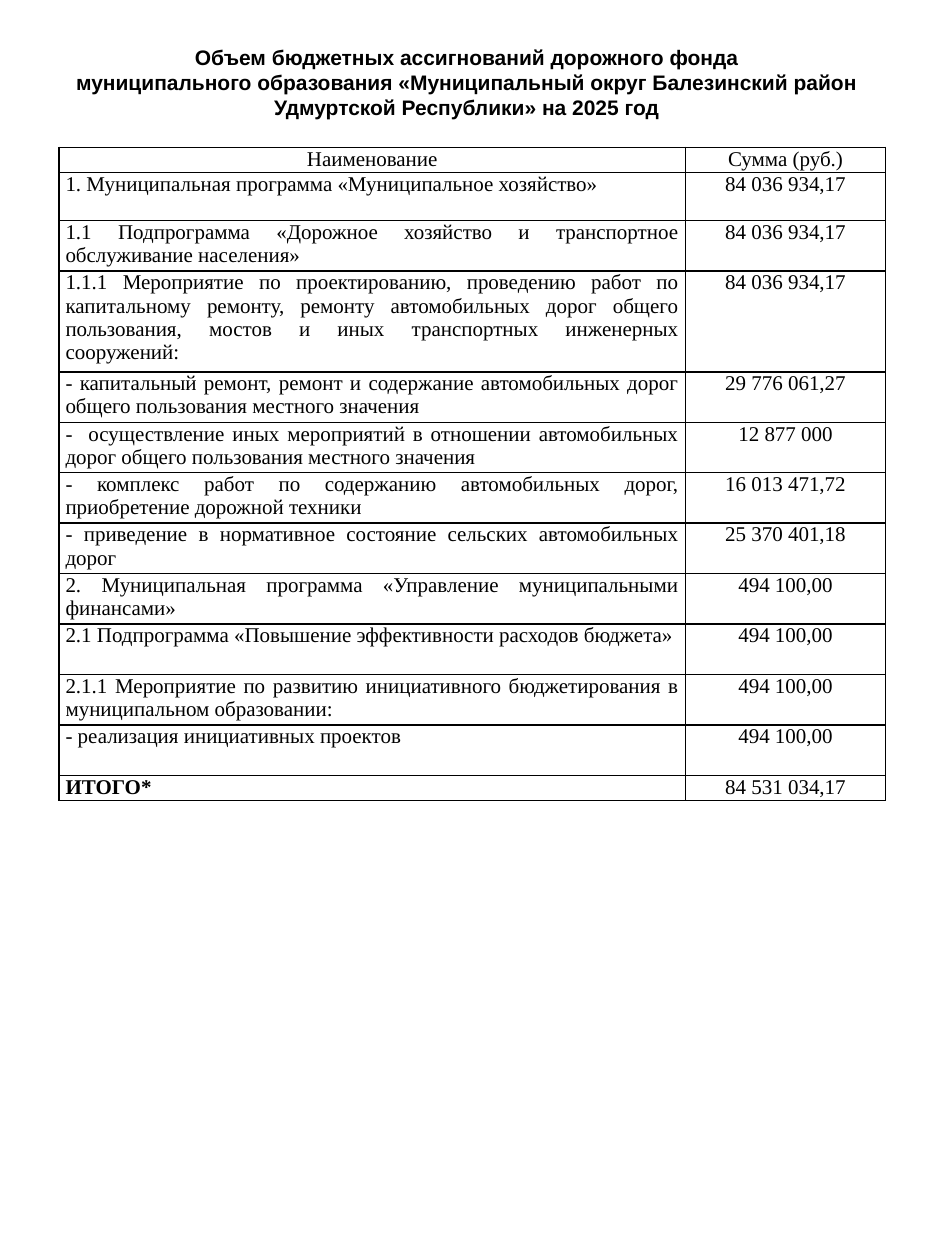
from dataclasses import dataclass

from lxml import etree
from pptx import Presentation
from pptx.dml.color import RGBColor
from pptx.enum.text import MSO_ANCHOR, PP_ALIGN
from pptx.oxml.ns import qn
from pptx.slide import Slide
from pptx.util import Inches, Pt

MIDDLE = MSO_ANCHOR.MIDDLE
CENTER, JUSTIFY, LEFT = PP_ALIGN.CENTER, PP_ALIGN.JUSTIFY, PP_ALIGN.LEFT
COLORS = {"ink": "000000"}

TITLE = [
    "Объем бюджетных ассигнований дорожного фонда",
    "муниципального образования «Муниципальный округ Балезинский район "
    "Удмуртской Республики» на 2025 год",
]
ROWS = [
    ("Наименование", "Сумма (руб.)", 0.2, CENTER),
    ("1. Муниципальная программа «Муниципальное хозяйство»",
     "84 036 934,17", 0.38, JUSTIFY),
    ("1.1 Подпрограмма «Дорожное хозяйство и транспортное обслуживание населения»",
     "84 036 934,17", 0.4, JUSTIFY),
    ("1.1.1 Мероприятие по проектированию, проведению работ по капитальному "
     "ремонту, ремонту автомобильных дорог общего пользования, мостов и иных "
     "транспортных инженерных сооружений:", "84 036 934,17", 0.8, JUSTIFY),
    ("- капитальный ремонт, ремонт и содержание автомобильных дорог общего "
     "пользования местного значения", "29 776 061,27", 0.4, JUSTIFY),
    ("-  осуществление иных мероприятий в отношении автомобильных дорог общего "
     "пользования местного значения", "12 877 000", 0.4, JUSTIFY),
    ("- комплекс работ по содержанию автомобильных дорог, приобретение "
     "дорожной техники", "16 013 471,72", 0.4, JUSTIFY),
    ("- приведение в нормативное состояние сельских автомобильных дорог",
     "25 370 401,18", 0.4, JUSTIFY),
    ("2. Муниципальная программа «Управление муниципальными финансами»",
     "494 100,00", 0.4, JUSTIFY),
    ("2.1 Подпрограмма «Повышение эффективности расходов бюджета»",
     "494 100,00", 0.4, JUSTIFY),
    ("2.1.1 Мероприятие по развитию инициативного бюджетирования в "
     "муниципальном образовании:", "494 100,00", 0.4, JUSTIFY),
    ("- реализация инициативных проектов", "494 100,00", 0.4, LEFT),
    ("ИТОГО*", "84 531 034,17", 0.2, LEFT),
]


@dataclass
class Page:
    slide: Slide
    head: str = "Arial"
    body: str = "Times New Roman"
    size: float = 12
    line: float = 1

    def label(self, para, text, face, align, bold=False):
        para.text = text
        para.alignment = align
        font = para.font
        font.name, font.size, font.bold = face, Pt(self.size), bold
        font.color.rgb = RGBColor.from_string(COLORS["ink"])

    def title(self, lines, left, top, width, height):
        box = self.slide.shapes.add_textbox(
            Inches(left), Inches(top), Inches(width), Inches(height))
        frame = box.text_frame
        frame.word_wrap = True
        frame.vertical_anchor = MIDDLE
        for i, text in enumerate(lines):
            para = frame.add_paragraph() if i else frame.paragraphs[0]
            self.label(para, text, self.head, CENTER, True)
            para.line_spacing = Pt(14.3)

    def border(self, cell):
        props = cell._tc.get_or_add_tcPr()
        for side in ("lnL", "lnR", "lnT", "lnB"):
            edge = etree.SubElement(props, qn(f"a:{side}"), w=str(Pt(self.line)))
            fill = etree.SubElement(edge, qn("a:solidFill"))
            etree.SubElement(fill, qn("a:srgbClr"), val=COLORS["ink"])

    def cell(self, cell, text, align, bold):
        cell.margin_left = cell.margin_right = Inches(0.05)
        cell.margin_top = cell.margin_bottom = 0
        self.border(cell)
        cell.fill.background()
        self.label(cell.text_frame.paragraphs[0], text, self.body, align, bold)

    def table(self, rows, left, top, widths):
        height = sum(row[2] for row in rows)
        grid = self.slide.shapes.add_table(
            len(rows), len(widths), Inches(left), Inches(top),
            Inches(sum(widths)), Inches(height)).table
        grid.first_row = grid.horz_banding = False
        for col, width in zip(grid.columns, widths):
            col.width = Inches(width)
        for i, (name, total, high, align) in enumerate(rows):
            grid.rows[i].height = Inches(high)
            self.cell(grid.cell(i, 0), name, align, i == len(rows) - 1)
            self.cell(grid.cell(i, 1), total, CENTER, False)


def main():
    deck = Presentation()
    deck.slide_width, deck.slide_height = Inches(7.5), Inches(10)
    page = Page(deck.slides.add_slide(deck.slide_layouts[6]))
    page.title(TITLE, 0.28, 0.1, 6.85, 1.1)
    page.table(ROWS, 0.47, 1.17, [4.97, 1.59])
    deck.save("out.pptx")


if __name__ == "__main__":
    main()
